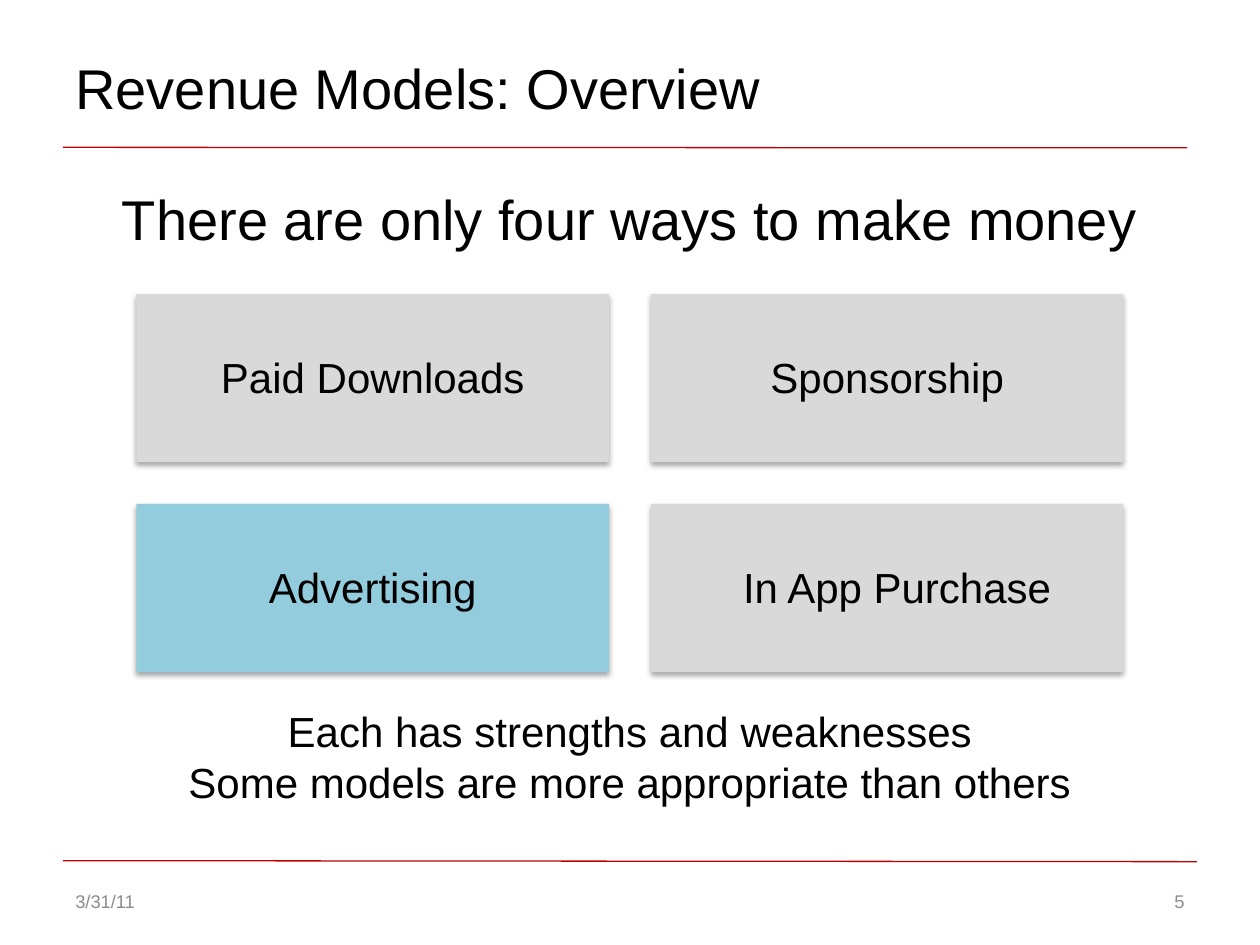
from lxml import etree
from pptx import Presentation
from pptx import util as u
from pptx.dml import color
from pptx.enum import shapes, text
from pptx.oxml import ns

FONT = "Arial"
BLACK, GREY, RED = "000000", "8C8C8C", "C00000"
PANEL, HIGHLIGHT = "D9D9D9", "93CDDD"
PANEL_LEFT, PANEL_TOP = 2.75, 5.93
PANEL_WIDTH, PANEL_HEIGHT = 9.53, 3.39
COLUMN_STEP, ROW_STEP = 10.37, 4.23
MODELS = [
    [("Paid Downloads", PANEL, 0), ("Sponsorship", PANEL, 0)],
    [("Advertising", HIGHLIGHT, 0), ("In App Purchase", PANEL, 0.2)],
]


def rgb(code):
    """Turn a hex string into a colour."""
    return color.RGBColor.from_string(code)


def add_effects(shape):
    """Append an effect list to a shape and return it."""
    return etree.SubElement(shape._element.spPr, ns.qn("a:effectLst"))


def add_rule(page, start, end):
    """Draw a thin red line between two points."""
    points = [u.Cm(value) for value in (*start, *end)]
    rule = page.shapes.add_connector(shapes.MSO_CONNECTOR.STRAIGHT, *points)
    rule.line.color.rgb = rgb(RED)
    rule.line.width = u.Pt(0.75)
    add_effects(rule)


def add_panel(page, left, top, fill):
    """Draw a filled rectangle with a soft shadow below it."""
    panel = page.shapes.add_shape(
        shapes.MSO_SHAPE.RECTANGLE,
        u.Cm(left), u.Cm(top), u.Cm(PANEL_WIDTH), u.Cm(PANEL_HEIGHT))
    panel.fill.solid()
    panel.fill.fore_color.rgb = rgb(fill)
    panel.line.fill.background()
    shadow = etree.SubElement(
        add_effects(panel), ns.qn("a:outerShdw"),
        blurRad=str(u.Pt(3.1)), dist=str(u.Pt(1.8)), dir="5400000", rotWithShape="0")
    shade = etree.SubElement(shadow, ns.qn("a:srgbClr"), val=BLACK)
    etree.SubElement(shade, ns.qn("a:alpha"), val="35000")


def add_text(page, lines, left, top, width, height, *, size=24, fill=BLACK,
             align=text.PP_ALIGN.CENTER, anchor=text.MSO_ANCHOR.TOP, inset=0.13):
    """Add a wrapped text box with one paragraph for each line."""
    box = page.shapes.add_textbox(u.Cm(left), u.Cm(top), u.Cm(width), u.Cm(height))
    frame = box.text_frame
    frame.word_wrap = True
    frame.vertical_anchor = anchor
    frame.margin_top = u.Cm(inset)
    for index, line in enumerate(lines):
        para = frame.add_paragraph() if index else frame.paragraphs[0]
        para.alignment = align
        span = para.add_run()
        span.text = line
        span.font.name = FONT
        span.font.size = u.Pt(size)
        span.font.color.rgb = rgb(fill)


def add_models(page):
    """Lay out the revenue models as a grid of labelled panels."""
    for row, models in enumerate(MODELS):
        for column, (name, fill, shift) in enumerate(models):
            left = PANEL_LEFT + column * COLUMN_STEP
            top = PANEL_TOP + row * ROW_STEP
            add_panel(page, left, top, fill)
            add_text(page, [name], left + shift, top + 0.05,
                     PANEL_WIDTH, PANEL_HEIGHT - 0.05, inset=1.1)


def main():
    """Build the revenue models slide."""
    deck = Presentation()
    deck.slide_width, deck.slide_height = u.Cm(25.4), u.Cm(19.05)
    page = deck.slides.add_slide(deck.slide_layouts[6])
    left, right, middle = text.PP_ALIGN.LEFT, text.PP_ALIGN.RIGHT, text.MSO_ANCHOR.MIDDLE

    add_rule(page, (1.27, 2.97), (23.93, 2.98))
    add_rule(page, (1.27, 17.35), (24.13, 17.37))
    add_text(page, ["Revenue Models: Overview"], 1.27, 0.76, 17.35, 1.98,
             size=32, align=left, anchor=middle)
    add_text(page, ["There are only four ways to make money"],
             1.27, 3.6, 22.86, 1.9, size=32)
    add_models(page)
    add_text(page, ["Each has strengths and weaknesses",
                    "Some models are more appropriate than others"],
             1.48, 14.1, 22.43, 2.2)
    for label, start, align in (("3/31/11", 1.27, left), ("5", 18.21, right)):
        add_text(page, [label], start, 17.65, 5.92, 1.02,
                 size=10.5, fill=GREY, align=align, anchor=middle)
    deck.save("out.pptx")


if __name__ == "__main__":
    main()
